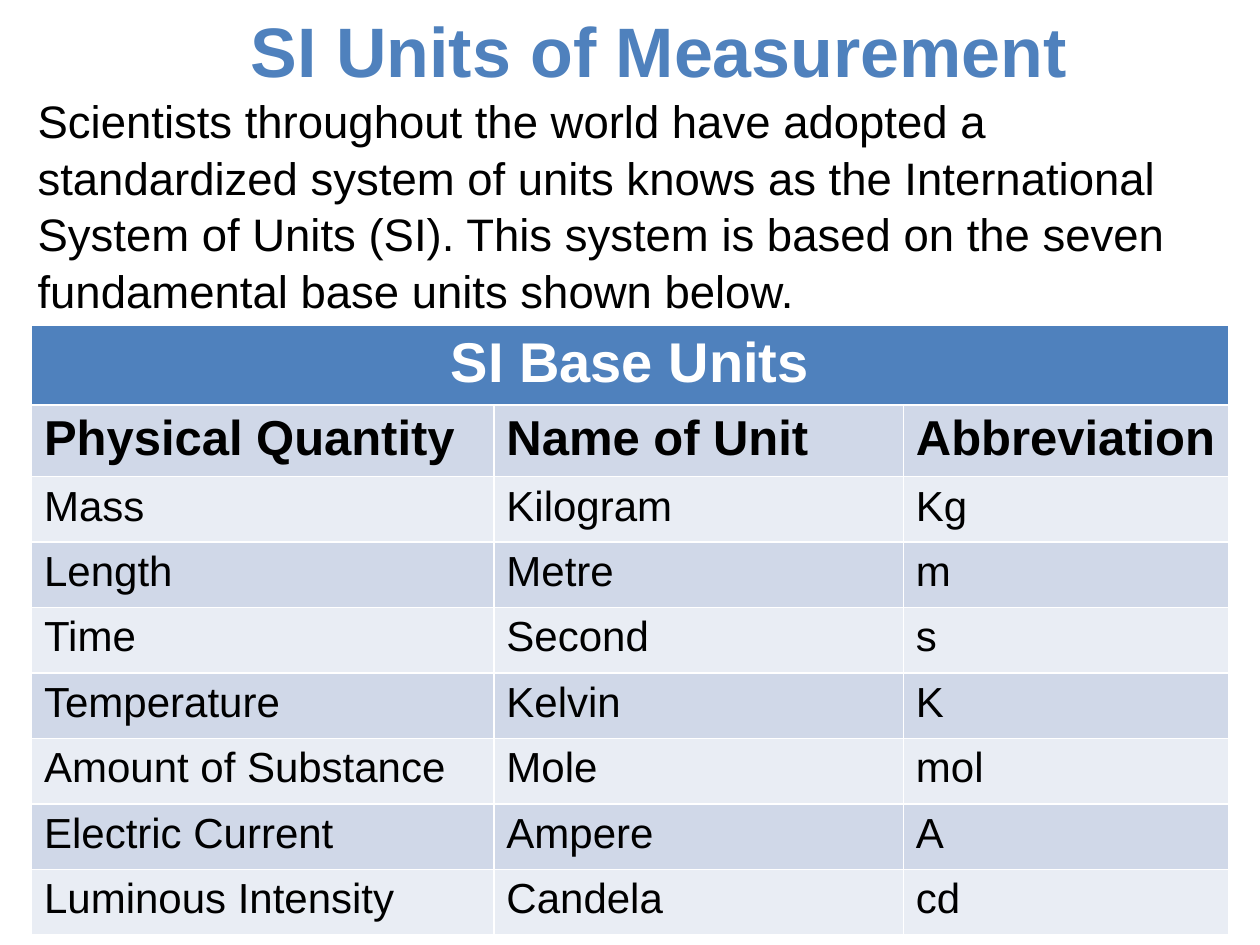
from pptx import Presentation
from pptx.dml.color import RGBColor
from pptx.enum.text import MSO_ANCHOR, PP_ALIGN
from pptx.util import Inches, Pt

CENTER, LEFT = PP_ALIGN.CENTER, PP_ALIGN.LEFT
MIDDLE = MSO_ANCHOR.MIDDLE

BLUE = RGBColor(0x4F, 0x81, 0xBD)
BAND_DARK = RGBColor(0xD0, 0xD8, 0xE8)
BAND_LIGHT = RGBColor(0xE9, 0xED, 0xF4)
WHITE = RGBColor(0xFF, 0xFF, 0xFF)
BLACK = RGBColor(0x00, 0x00, 0x00)

BASE_UNITS = [
    ("Physical Quantity", "Name of Unit", "Abbreviation"),
    ("Mass", "Kilogram", "Kg"),
    ("Length", "Metre", "m"),
    ("Time", "Second", "s"),
    ("Temperature", "Kelvin", "K"),
    ("Amount of Substance", "Mole", "mol"),
    ("Electric Current", "Ampere", "A"),
    ("Luminous Intensity", "Candela", "cd"),
]


def write(frame, text, size, color, bold=False, align=LEFT):
    paragraph = frame.paragraphs[0]
    paragraph.alignment = align
    run = paragraph.add_run()
    run.text = text
    run.font.name = "Arial"
    run.font.size = Pt(size)
    run.font.bold = bold
    run.font.color.rgb = color
    return paragraph


prs = Presentation()
prs.slide_width, prs.slide_height = Inches(10), Inches(7.5)
slide = prs.slides.add_slide(prs.slide_layouts[5])

# Title, set slightly right of centre by its left inset
title = slide.shapes.title
title.left, title.top = Inches(0), Inches(0.08)
title.width, title.height = Inches(10), Inches(0.63)
title.text_frame.vertical_anchor = MIDDLE
title.text_frame.margin_left = Inches(0.56)
write(title.text_frame, "SI Units of Measurement", 40, BLUE, True, CENTER)

# Introduction
intro = slide.shapes.add_textbox(Inches(0.2), Inches(0.67), Inches(9.61), Inches(1.85))
intro.text_frame.word_wrap = True
intro_paragraph = write(
    intro.text_frame,
    "Scientists throughout the world have adopted a standardized system of units "
    "knows as the International System of Units (SI). This system is based on the "
    "seven fundamental base units shown below.",
    26, BLACK)
intro_paragraph.line_spacing = 1.04

# Table of base units; its default style draws the white cell borders
units = slide.shapes.add_table(
    len(BASE_UNITS) + 1, 3, Inches(0.25), Inches(2.58), Inches(9.5), Inches(4.83)).table
for column, width in zip(units.columns, (3.67, 3.25, 2.58)):
    column.width = Inches(width)
for row, height in zip(units.rows, [0.62, 0.57] + [0.52] * 7):
    row.height = Inches(height)

# Heading across all columns
heading = units.cell(0, 0)
heading.merge(units.cell(0, 2))
heading.fill.solid()
heading.fill.fore_color.rgb = BLUE
write(heading.text_frame, "SI Base Units", 32, WHITE, True, CENTER)

# Column names and units, in alternating bands
for r, entries in enumerate(BASE_UNITS, start=1):
    is_header = r == 1
    for c, entry in enumerate(entries):
        cell = units.cell(r, c)
        cell.fill.solid()
        cell.fill.fore_color.rgb = BAND_DARK if r % 2 else BAND_LIGHT
        write(cell.text_frame, entry, 28 if is_header else 24, BLACK, is_header)

prs.save("out.pptx")
